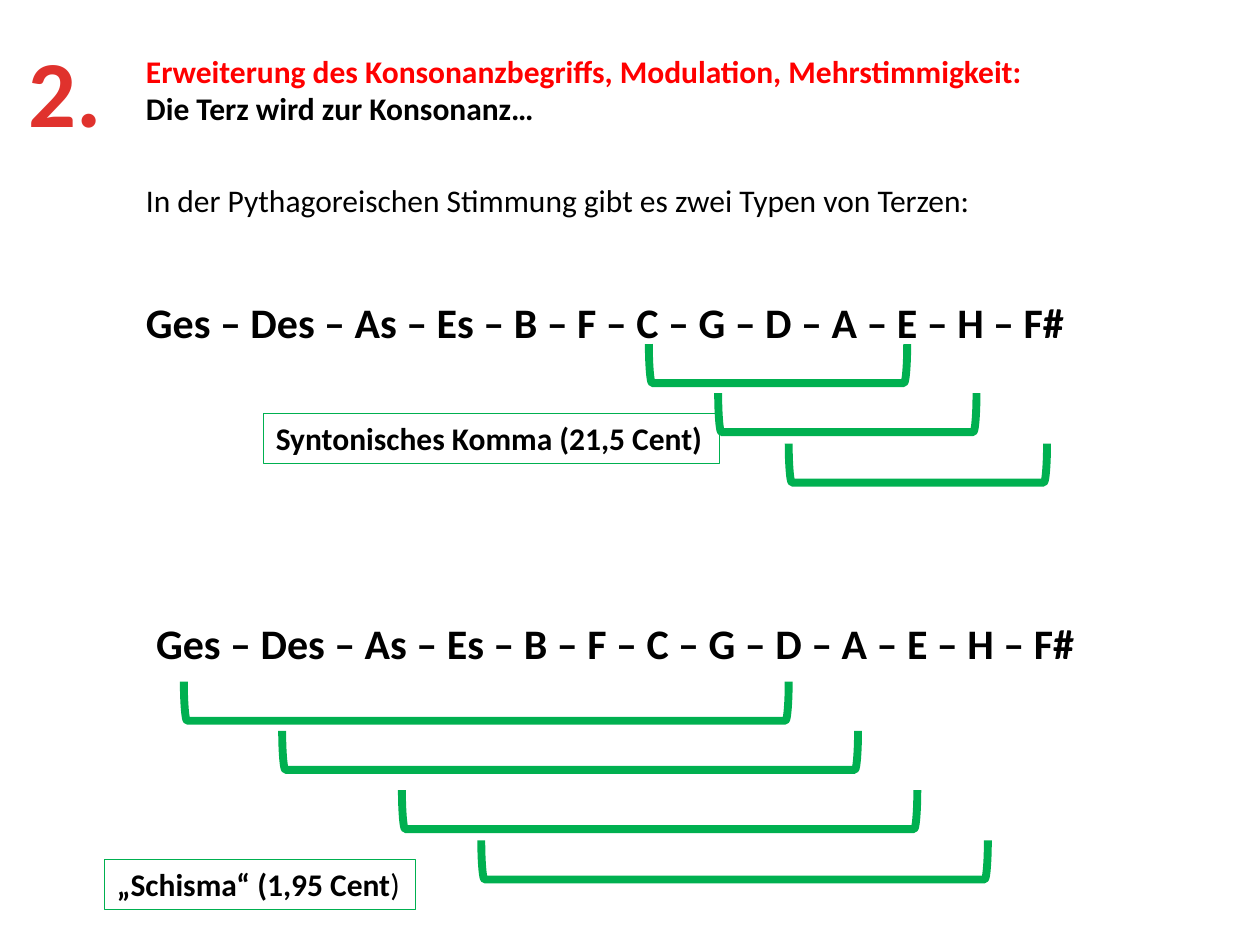
"""Build the slide on the two types of thirds in Pythagorean tuning."""
from pptx import Presentation
from pptx.dml.color import RGBColor
from pptx.enum.shapes import MSO_SHAPE as Shape
from pptx.enum.text import MSO_ANCHOR as Anchor, MSO_AUTO_SIZE as AutoSize, PP_ALIGN as Align
from pptx.util import Inches, Pt

COLORS = {"black": "000000", "red": "FF0000", "number": "E0322D", "green": "00B050"}
FIFTHS = "Ges – Des – As – Es – B – F – C – G – D – A – E – H – F#"
BRACKET_DEPTH = 0.31


def add_text(page, bounds, lines, wrap=False, outlined=False):
    box = page.shapes.add_textbox(*map(Inches, bounds))
    frame = box.text_frame
    frame.word_wrap = wrap
    frame.auto_size = AutoSize.SHAPE_TO_FIT_TEXT
    frame.vertical_anchor = Anchor.TOP
    if outlined:
        box.line.color.rgb = RGBColor.from_string(COLORS["green"])
        box.line.width = Pt(0.75)
    for index, (text, size, bold, color) in enumerate(lines):
        para = frame.add_paragraph() if index else frame.paragraphs[0]
        para.text = text
        para.font.name = "Calibri"
        para.font.size = Pt(size)
        para.font.bold = bold
        para.font.color.rgb = RGBColor.from_string(COLORS[color])
    return frame


def add_bracket(page, start, end, top):
    span = end - start
    left = (start + end - BRACKET_DEPTH) / 2
    upright_top = top + (BRACKET_DEPTH - span) / 2
    bracket = page.shapes.add_shape(
        Shape.LEFT_BRACKET, *map(Inches, (left, upright_top, BRACKET_DEPTH, span)))
    bracket.rotation = 270
    bracket.shadow.inherit = False
    bracket.fill.background()
    bracket.line.color.rgb = RGBColor.from_string(COLORS["green"])
    bracket.line.width = Pt(4.5)


deck = Presentation()
deck.slide_width, deck.slide_height = Inches(10), Inches(7.5)
page = deck.slides.add_slide(deck.slide_layouts[6])

intro = add_text(page, (1.06, 1.39, 7.87, 1.41), [
    ("In der Pythagoreischen Stimmung gibt es zwei Typen von Terzen:", 18, False, "black"),
    (FIFTHS, 24, True, "black"),
], wrap=True)
intro.paragraphs[1].space_before = Pt(44)

add_text(page, (1.06, 0.36, 7.22, 0.71), [
    ("Erweiterung des Konsonanzbegriffs, Modulation, Mehrstimmigkeit:", 18, True, "red"),
    ("Die Terz wird zur Konsonanz…", 18, True, "black"),
])
add_text(page, (1.14, 4.85, 7.56, 0.81), [(FIFTHS, 24, True, "black")])

syntonic_thirds = [(5.15, 7.2, 2.73), (5.7, 7.75, 3.12), (6.26, 8.31, 3.52)]
schisma_thirds = [(1.46, 6.26, 5.41), (2.24, 6.81, 5.8), (3.19, 7.28, 6.27), (3.82, 7.84, 6.67)]
for start, end, top in syntonic_thirds + schisma_thirds:
    add_bracket(page, start, end, top)

add_text(page, (2.09, 3.28, 3.62, 0.4),
         [("Syntonisches Komma (21,5 Cent)", 18, True, "black")], outlined=True)
schisma = add_text(page, (0.83, 6.82, 2.47, 0.4),
                   [("„Schisma“ (1,95 Cent", 18, True, "black")], outlined=True)
span = schisma.paragraphs[0].add_run()
span.text = ")"
span.font.bold = False

number = add_text(page, (0.12, 0.21, 0.8, 1.01), [("2.", 54, True, "number")])
number.paragraphs[0].alignment = Align.CENTER

deck.save("out.pptx")
